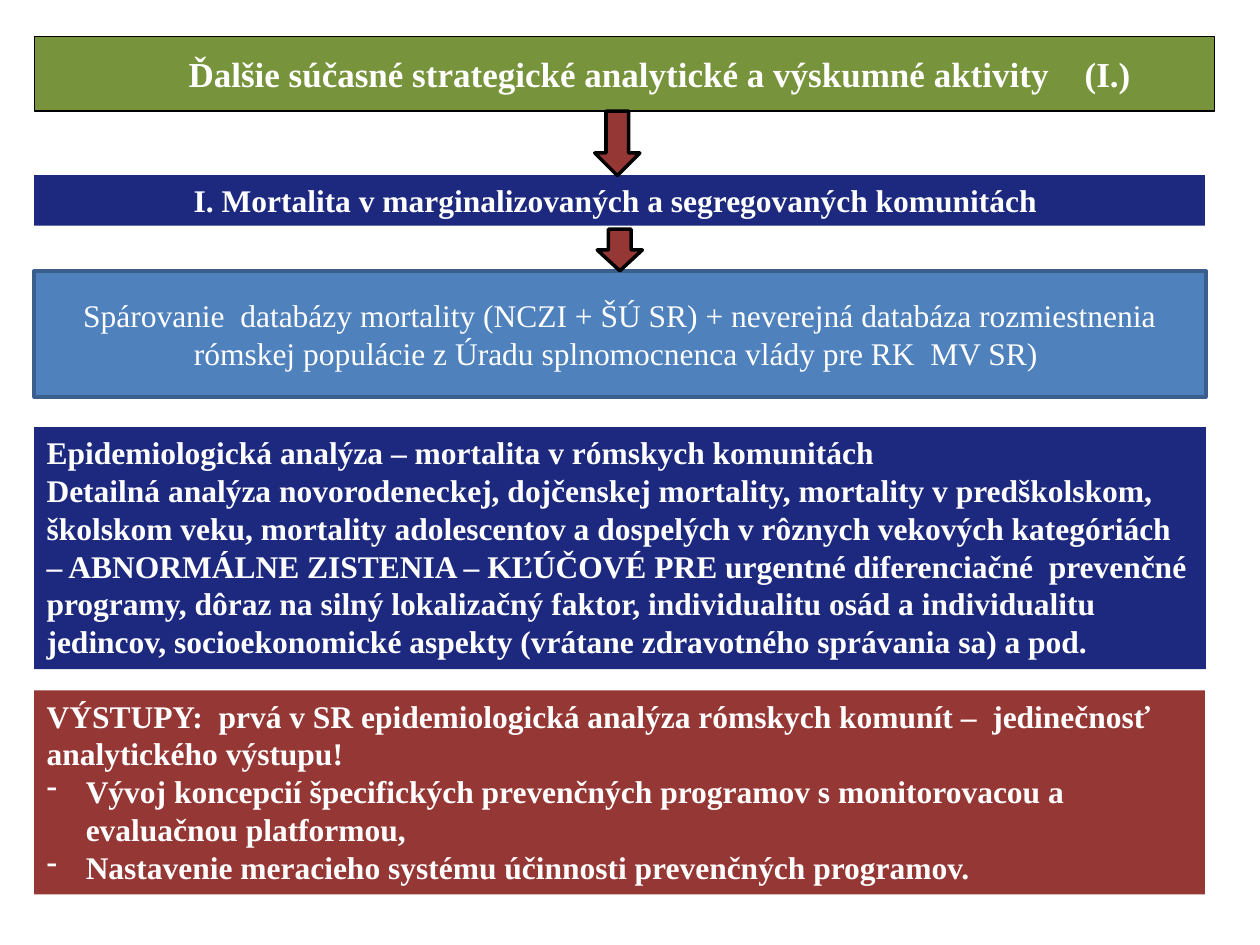
from lxml import etree
from pptx import Presentation
from pptx import util as u
from pptx.dml.color import RGBColor
from pptx.enum import shapes, text
from pptx.oxml.ns import qn

GREEN, NAVY, RED, BLUE = "77933C", "1D297F", "953735", "4F81BD"
LEFT = 0.69
MID, TOP = text.MSO_ANCHOR.MIDDLE, text.MSO_ANCHOR.TOP
CENTER, START = text.PP_ALIGN.CENTER, text.PP_ALIGN.LEFT


def rgb(code):
    return RGBColor.from_string(code)


def draw(kind, box, fill, line=None, width=2):
    """Add a shape at box (left, top, width, height in cm)."""
    shape = page.shapes.add_shape(kind, *[u.Cm(v) for v in box])
    shape.shadow.inherit = False
    shape.fill.solid()
    shape.fill.fore_color.rgb = rgb(fill)
    if line:
        shape.line.color.rgb = rgb(line)
        shape.line.width = u.Pt(width)
    else:
        shape.line.fill.background()
    return shape


deck = Presentation()
deck.slide_width, deck.slide_height = u.Cm(25.4), u.Cm(19.05)
page = deck.slides.add_slide(deck.slide_layouts[6])

# top, width, height, fill, line, line width, anchor, alignment, size, bold, lines
panels = [
    (0.74, 23.8, 1.5, GREEN, "000000", 0.75, MID, CENTER, 20, True,
     ["Ďalšie súčasné strategické analytické a výskumné aktivity"]),
    (3.53, 23.6, 1.02, NAVY, None, 0, TOP, CENTER, 18, True,
     ["I. Mortalita v marginalizovaných a segregovaných komunitách "]),
    (13.92, 23.6, 4.11, RED, None, 0, TOP, START, 18, True,
     ["VÝSTUPY:  prvá v SR epidemiologická analýza rómskych komunít –  "
      "jedinečnosť analytického výstupu!",
      "Vývoj koncepcií špecifických prevenčných programov s monitorovacou a "
      "evaluačnou platformou,",
      "Nastavenie meracieho systému účinnosti prevenčných programov."]),
    (5.46, 23.62, 2.54, BLUE, "3A5F8C", 2, MID, CENTER, 18, False,
     ["Spárovanie  databázy mortality (NCZI + ŠÚ SR) + neverejná databáza "
      "rozmiestnenia rómskej populácie z Úradu splnomocnenca vlády pre RK  MV SR) "]),
    (8.61, 23.62, 4.88, NAVY, None, 0, TOP, START, 18, True,
     ["Epidemiologická analýza – mortalita v rómskych komunitách",
      "Detailná analýza novorodeneckej, dojčenskej mortality, mortality v "
      "predškolskom, školskom veku, mortality adolescentov a dospelých v rôznych "
      "vekových kategóriách – ABNORMÁLNE ZISTENIA – KĽÚČOVÉ PRE urgentné "
      "diferenciačné  prevenčné programy, dôraz na silný lokalizačný faktor, "
      "individualitu osád a individualitu jedincov, socioekonomické aspekty "
      "(vrátane zdravotného správania sa) a pod."]),
]

frames = []
for top, wide, high, fill, line, width, anchor, align, size, bold, lines in panels:
    frame = draw(shapes.MSO_SHAPE.RECTANGLE, (LEFT, top, wide, high),
                 fill, line, width).text_frame
    frame.word_wrap = True
    frame.vertical_anchor = anchor
    frame.text = "\n".join(lines)
    frames.append(frame)
    if fill == GREEN:
        # The part number stands apart: one widely spaced blank before it
        frame.margin_left = u.Cm(1.66)
        for part in (" ", "(I.)"):
            frame.paragraphs[0].add_run().text = part
        gap = frame.paragraphs[0].runs[1]
        gap.font._element.set("spc", "1500")
    for para in frame.paragraphs:
        para.alignment = align
        for run in para.runs:
            run.font.name = "Times New Roman"
            run.font.size = u.Pt(size)
            run.font.bold = bold
            run.font.color.rgb = rgb("FFFFFF")

# Dashes for the list of outputs
for para in frames[2].paragraphs[1:]:
    props = para._p.get_or_add_pPr()
    props.set("marL", str(u.Cm(0.79)))
    props.set("indent", str(-u.Cm(0.79)))
    etree.SubElement(props, qn("a:buFontTx"))
    etree.SubElement(props, qn("a:buChar")).set("char", "-")

for left, top, high in ((11.99, 2.24, 1.3), (12.04, 4.62, 0.84)):
    draw(shapes.MSO_SHAPE.DOWN_ARROW, (left, top, 0.91, high), RED, "000000")

deck.save("out.pptx")
